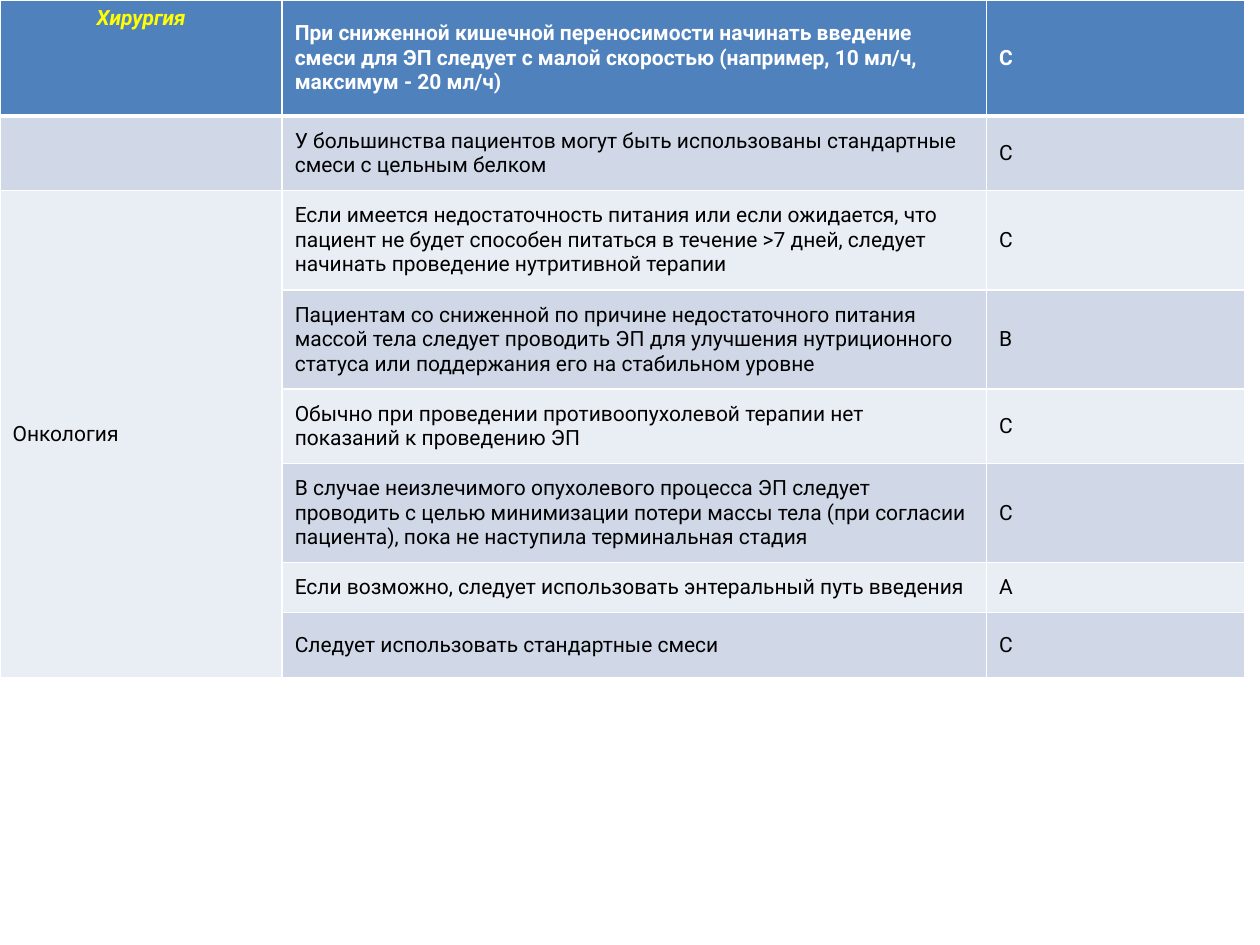
"""Build a slide with a table of enteral nutrition recommendations."""
from lxml.etree import SubElement
from pptx import Presentation
from pptx.dml.color import RGBColor
from pptx.enum.text import MSO_ANCHOR as ANCHOR, PP_ALIGN as ALIGN
from pptx.oxml.ns import qn
from pptx.util import Pt


def rgb(value):
    return RGBColor.from_string(value)


def add_border(cell, side, width):
    ln = SubElement(cell._tc.get_or_add_tcPr(), qn(f"a:ln{side}"), w=str(Pt(width)))
    fill = SubElement(ln, qn("a:solidFill"))
    SubElement(fill, qn("a:srgbClr"), val="FFFFFF")


HEADER, DARK, LIGHT = "4F81BD", "D0D8E8", "E9EDF4"
COL_WIDTHS = [161.28, 402.48, 147.6]
ROWS = [
    (66.24, "Хирургия", "При сниженной кишечной переносимости начинать введение смеси для ЭП "
     "следует с малой скоростью (например, 10 мл/ч, максимум - 20 мл/ч)", "С"),
    (41.04, "", "У большинства пациентов могут быть использованы стандартные смеси "
     "с цельным белком", "С"),
    (56.88, "Онкология", "Если имеется недостаточность питания или если ожидается, что пациент "
     "не будет способен питаться в течение >7 дней, следует начинать проведение "
     "нутритивной терапии", "С"),
    (52.56, "", "Пациентам со сниженной по причине недостаточного питания массой тела следует "
     "проводить ЭП для улучшения нутриционного статуса или поддержания его "
     "на стабильном уровне", "В"),
    (26.64, "", "Обычно при проведении противоопухолевой терапии нет показаний "
     "к проведению ЭП", "С"),
    (39.6, "", "В случае неизлечимого опухолевого процесса ЭП следует проводить с целью "
     "минимизации потери массы тела (при согласии пациента), пока не наступила "
     "терминальная стадия", "С"),
    (21.6, "", "Если возможно, следует использовать энтеральный путь введения", "А"),
    (37.44, "", "Следует использовать стандартные смеси", "С"),
]

prs = Presentation()
prs.slide_width, prs.slide_height = Pt(720), Pt(540)
s = prs.slides.add_slide(prs.slide_layouts[6])

frame = s.shapes.add_table(len(ROWS), len(COL_WIDTHS), Pt(0), Pt(0), Pt(711.36), Pt(394.56))
table = frame.table
for column, width in zip(table.columns, COL_WIDTHS):
    column.width = Pt(width)

for i, (height, *texts) in enumerate(ROWS):
    table.rows[i].height = Pt(height)
    is_header = i == 0
    for j, text in enumerate(texts):
        is_title = is_header and j == 0
        cell = table.cell(i, j)
        add_border(cell, "L", 1)
        add_border(cell, "R", 1)
        add_border(cell, "T", 3 if i == 1 else 1)
        add_border(cell, "B", 3 if is_header else 1)
        cell.fill.solid()
        cell.fill.fore_color.rgb = rgb(HEADER if is_header else DARK if i % 2 else LIGHT)
        if not text:
            continue
        cell.text_frame.text = text
        p = cell.text_frame.paragraphs[0]
        if is_title:
            p.alignment = ALIGN.CENTER
        else:
            cell.vertical_anchor = ANCHOR.MIDDLE
            cell.margin_left = cell.margin_right = Pt(7.2)
            cell.margin_top = cell.margin_bottom = Pt(7.2)
        font = p.runs[0].font
        font.name, font.size = "Roboto", Pt(12)
        font.bold, font.italic = is_header, is_title
        font.color.rgb = rgb("FFFF00" if is_title else "FFFFFF" if is_header else "000000")

table.cell(2, 0).merge(table.cell(len(ROWS) - 1, 0))

prs.save("out.pptx")
